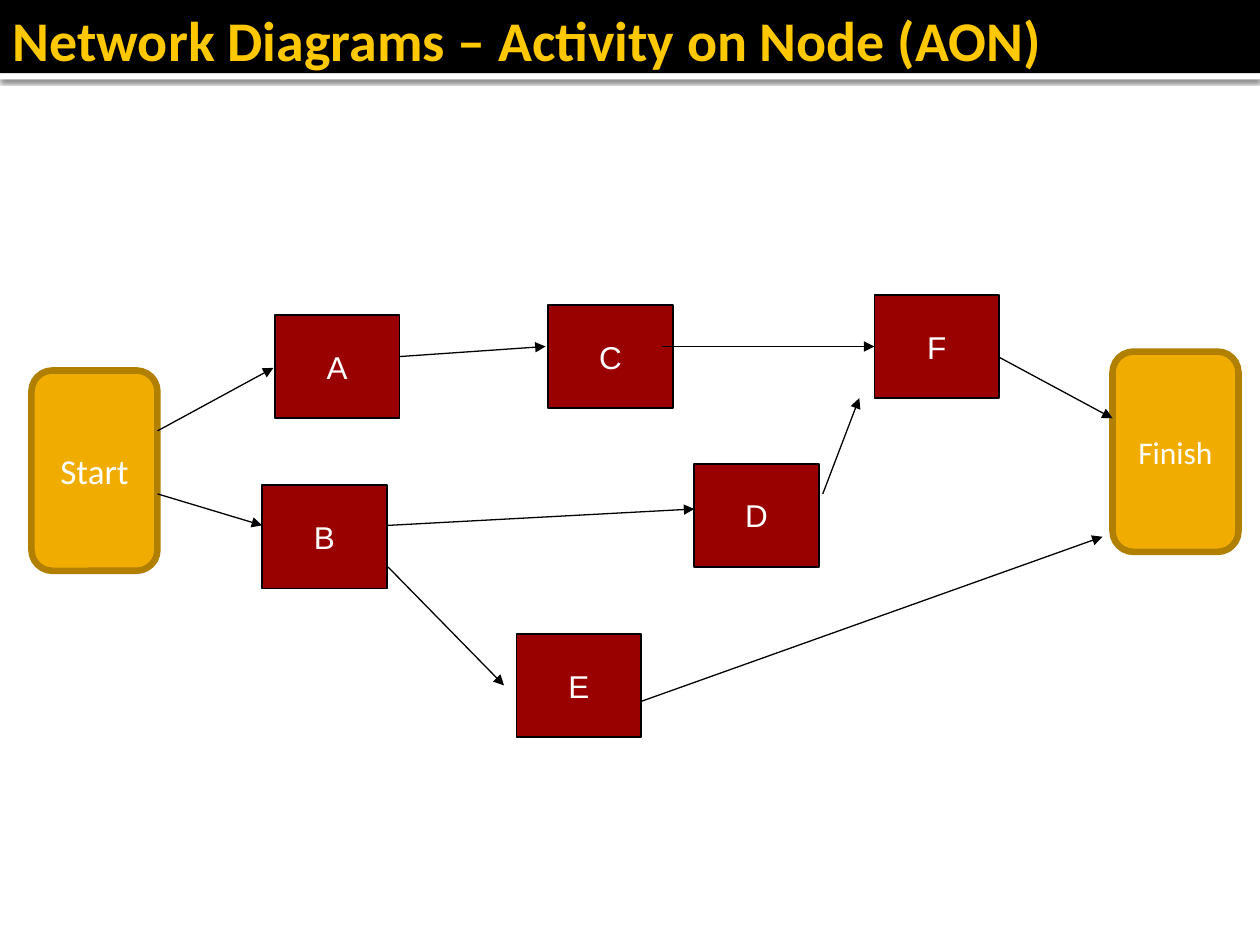
from lxml.etree import SubElement as Sub
from pptx import Presentation as Deck
from pptx.dml.color import RGBColor as Rgb
from pptx.enum.shapes import MSO_CONNECTOR as Link, MSO_SHAPE as Form
from pptx.enum.text import MSO_ANCHOR as Anchor, PP_ALIGN as Align
from pptx.oxml.ns import qn
from pptx.util import Inches, Pt

# Content
TITLE = "Network Diagrams – Activity on Node (AON)"
TASKS = {  # left, top
    "A": (2.18, 2.5), "B": (2.08, 3.85), "C": (4.35, 2.42),
    "D": (5.51, 3.68), "E": (4.1, 5.03), "F": (6.94, 2.34),
}
ENDS = {"Start": (0.25, 2.94, 20), "Finish": (8.83, 2.79, 18)}  # left, top, size
ARROWS = [  # tail point, head point
    ((1.25, 3.42), (2.17, 2.92)),  # Start to A
    ((1.25, 3.92), (2.08, 4.17)),  # Start to B
    ((3.17, 2.83), (4.33, 2.75)),  # A to C
    ((3.08, 4.17), (5.51, 4.04)),  # B to D
    ((3.08, 4.5), (4, 5.44)),      # B to E
    ((5.25, 2.75), (6.94, 2.75)),  # C to F
    ((6.53, 3.92), (6.82, 3.16)),  # D to F
    ((7.92, 2.83), (8.83, 3.32)),  # F to Finish
    ((5.08, 5.57), (8.75, 4.26)),  # E to Finish
]
HEX = {"black": "000000", "white": "FFFFFF", "red": "990000",
       "gold": "F0AD00", "rim": "B28000", "title": "FFC800"}
TASK = {"form": Form.RECTANGLE, "size": (0.99, 0.82), "fill": "red",
        "line": "black", "width": 1, "font": "Arial", "wrap": False}
END = {"form": Form.ROUNDED_RECTANGLE, "size": (1, 1.59), "fill": "gold",
       "line": "rim", "width": 3.78, "font": "Calibri", "wrap": True}


def color(name):
    return Rgb.from_string(HEX[name])


def put(item, **values):
    for key, value in values.items():
        setattr(item, key, value)


def write(shape, text, align, wrap, right, tint, **font):
    frame = shape.text_frame
    put(frame, text=text, word_wrap=wrap, vertical_anchor=Anchor.MIDDLE,
        margin_left=Inches(0.1), margin_right=Inches(right),
        margin_top=Inches(0.05), margin_bottom=Inches(0.05))
    para = frame.paragraphs[0]
    para.alignment = align
    put(para.runs[0].font, **font)
    para.runs[0].font.color.rgb = color(tint)


def block(form, box, fill):
    shape = slide.shapes.add_shape(form, *map(Inches, box))
    shape.shadow.inherit = False
    shape.fill.solid()
    shape.fill.fore_color.rgb = color(fill)
    shape.line.fill.background()
    return shape


def node(text, spot, size, style):
    shape = block(style["form"], (*spot, *style["size"]), style["fill"])
    shape.line.color.rgb = color(style["line"])
    shape.line.width = Pt(style["width"])
    write(shape, text, Align.CENTER, style["wrap"], 0.1, "white",
          name=style["font"], size=Pt(size))


def arrow(start, stop):
    line = slide.shapes.add_connector(
        Link.STRAIGHT, *map(Inches, (*start, *stop)))
    line.line.color.rgb = color("black")
    line.line.width = Pt(0.75)
    Sub(line.line._get_or_add_ln(), qn("a:tailEnd"), type="triangle")
    Sub(line._element.spPr, qn("a:effectLst"))


deck = Deck()
put(deck, slide_width=Inches(10), slide_height=Inches(7.5))
slide = deck.slides.add_slide(deck.slide_layouts[5])

# Title band over a white strip with a soft shadow
strip = block(Form.RECTANGLE, (0, 0.58, 10, 0.05), "white")
glow = Sub(strip._element.spPr.find(qn("a:effectLst")), qn("a:outerShdw"),
           blurRad=str(Pt(2.5)), dist=str(Pt(0.8)), dir="5400000",
           algn="tl", rotWithShape="0")
Sub(Sub(glow, qn("a:srgbClr"), val=HEX["black"]), qn("a:alpha"), val="60000")
block(Form.RECTANGLE, (0, 0, 10, 0.58), "black")

title = slide.shapes.title
put(title, left=0, top=0, width=Inches(10), height=Inches(0.62))
write(title, TITLE, Align.LEFT, True, 0.05, "title",
      name="Calibri", size=Pt(32), bold=True)
slide.shapes._spTree.append(title._element)  # bring in front of the band

# Network
for name, spot in TASKS.items():
    node(name, spot, 18, TASK)
for name, (left, top, size) in ENDS.items():
    node(name, (left, top), size, END)
for start, stop in ARROWS:
    arrow(start, stop)

deck.save("out.pptx")
